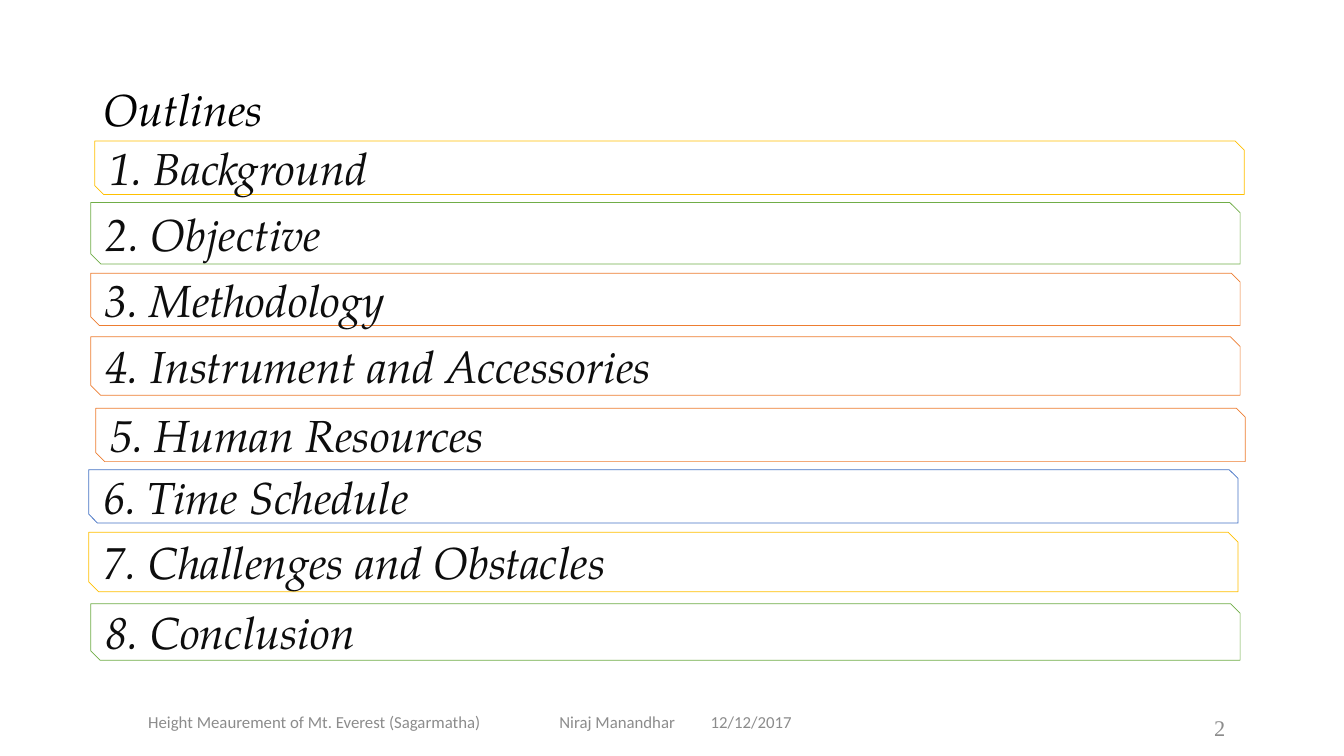
from pptx import Presentation
from pptx.dml.color import RGBColor
from pptx.enum import shapes, text
from pptx.util import Inches, Pt

SERIF = "TeX Gyre Pagella"
GREY = "8C8C8C"
GOLD, GREEN, ORANGE, BLUE = "FFC000", "70AD47", "ED7D31", "4472C4"
LEFT, CENTER, RIGHT = text.PP_ALIGN.LEFT, text.PP_ALIGN.CENTER, text.PP_ALIGN.RIGHT

# topic, left, top, height, outline colour
TOPICS = [
    ("Background", 0.94, 1.4, 0.53, GOLD),
    ("Objective", 0.9, 2.01, 0.61, GREEN),
    ("Methodology", 0.9, 2.71, 0.52, ORANGE),
    ("Instrument and Accessories", 0.9, 3.34, 0.58, ORANGE),
    ("Human Resources", 0.95, 4.05, 0.53, ORANGE),
    ("Time Schedule", 0.88, 4.66, 0.53, BLUE),
    ("Challenges and Obstacles", 0.88, 5.28, 0.59, GOLD),
    ("Conclusion", 0.9, 5.99, 0.56, GREEN),
]


def rgb(value):
    return RGBColor.from_string(value)


def write(sp, words, size, font, color, align=LEFT, italic=False):
    """Fill a shape with one vertically centred line of text."""
    tf = sp.text_frame
    tf.word_wrap = True
    tf.vertical_anchor = text.MSO_ANCHOR.MIDDLE
    p = tf.paragraphs[0]
    p.text = words
    p.alignment = align
    for r in p.runs:
        r.font.size = Pt(size)
        r.font.name = font
        r.font.italic = italic
        r.font.color.rgb = rgb(color)
    return p


def add_text(s, box, *args, **kwargs):
    sp = s.shapes.add_textbox(*map(Inches, box))
    return write(sp, *args, **kwargs)


def add_title(s, box):
    p = add_text(s, box, "Outlines", 32, SERIF, "000000", italic=True)
    p.line_spacing = 0.9


def add_topic(s, box, words, color):
    sp = s.shapes.add_shape(shapes.MSO_SHAPE.SNIP_2_DIAG_RECTANGLE, *map(Inches, box))
    sp.shadow.inherit = False
    sp.fill.background()
    sp.line.color.rgb = rgb(color)
    sp.line.width = Pt(0.5)
    write(sp, words, 32, SERIF, "0D0D0D", italic=True)


def add_footer(s, left, top):
    for dx, words in [(0, "Height Meaurement of Mt. Everest (Sagarmatha)"),
                      (3.58, "Niraj Manandhar \t12/12/2017")]:
        add_text(s, (left + dx, top, 3.72, 0.4), words, 12, "Calibri", GREY, CENTER)
    add_text(s, (left + 10.14, top + 0.06, 0.85, 0.4), "2", 16,
             "Times New Roman", GREY, RIGHT)


def main():
    prs = Presentation()
    prs.slide_width, prs.slide_height = Inches(13.33), Inches(7.5)
    s = prs.slides.add_slide(prs.slide_layouts[6])
    add_footer(s, 1.26, 6.96)
    add_title(s, (0.93, 0.69, 11.47, 0.84))
    for number, (topic, left, top, height, color) in enumerate(TOPICS, 1):
        add_topic(s, (left, top, 11.4, height), f"{number}. {topic}", color)
    prs.save("out.pptx")


if __name__ == "__main__":
    main()
